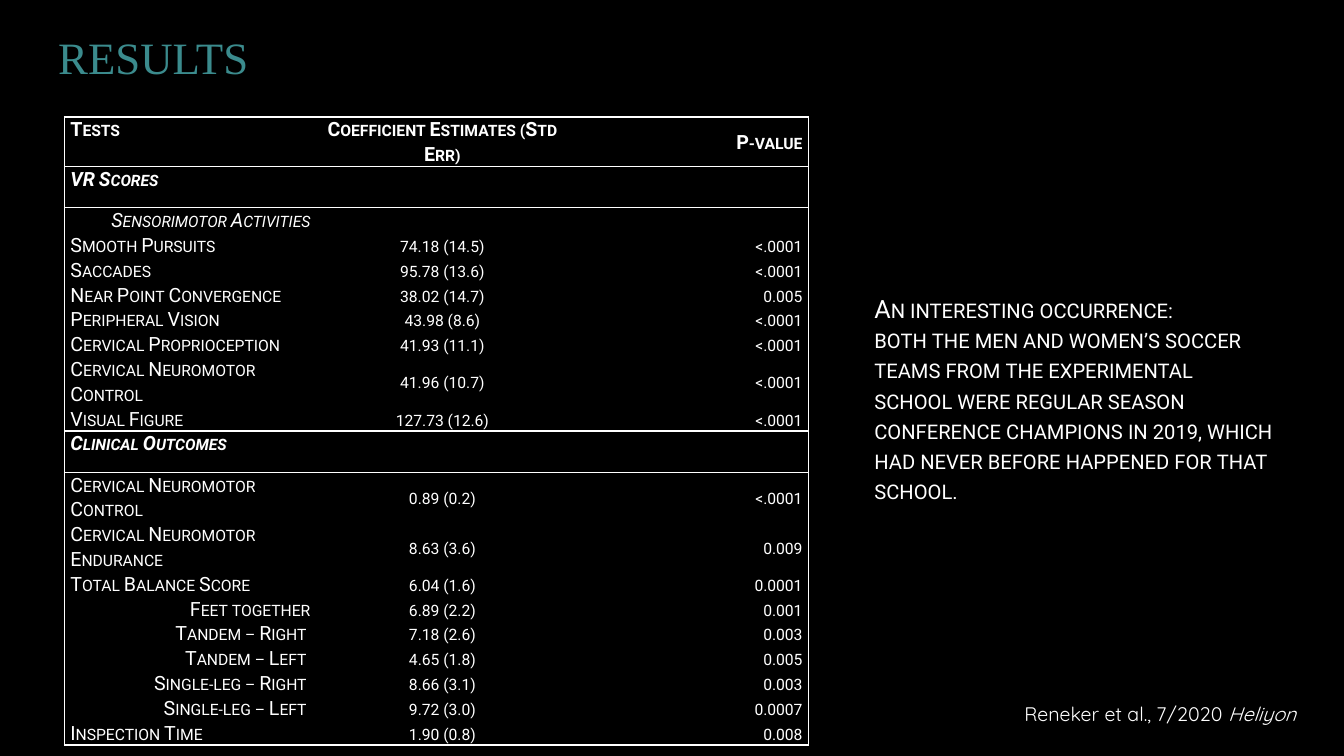
"""Build the results slide: a coefficient table, a remark and a citation."""
from dataclasses import dataclass

from pptx import Presentation, table as tbl, text as txt
from pptx.dml.color import RGBColor
from pptx.enum import text as et
from pptx.oxml import xmlchemy as xc
from pptx.text import text as tt
from pptx.util import Pt

BLACK = RGBColor(0x00, 0x00, 0x00)
WHITE = RGBColor(0xFF, 0xFF, 0xFF)
TEAL = RGBColor(0x3B, 0x8B, 0x8D)

LEFT, CENTER, RIGHT = et.PP_ALIGN.LEFT, et.PP_ALIGN.CENTER, et.PP_ALIGN.RIGHT
COLUMN_WIDTHS = (180, 180, 171.5)
LINE_HEIGHT = 17.7
SECTION_HEIGHT = 29.5


@dataclass(frozen=True)
class ResultRow:
    test: str
    estimate: str = ""
    p_value: str = ""
    align: et.PP_ALIGN = LEFT
    bold: bool = False
    italic: bool = False
    ruled: bool = False
    height: float = LINE_HEIGHT


@dataclass(frozen=True)
class Style:
    font: str
    size: float
    color: RGBColor = WHITE
    small_caps: bool = False


TITLE = Style("Times New Roman", 32, TEAL)
TABLE = Style("Roboto", 14, small_caps=True)
REMARK = Style("Roboto", 18, small_caps=True)
CITATION = Style("Quicksand", 14)


def section(name: str) -> ResultRow:
    """Describe a ruled section heading."""
    return ResultRow(name, bold=True, italic=True, ruled=True, height=SECTION_HEIGHT)


RESULTS = (
    ResultRow("Tests", "Coefficient Estimates (Std Err)", "P-value",
              bold=True, ruled=True, height=2 * LINE_HEIGHT),
    section("VR Scores"),
    ResultRow("Sensorimotor Activities", align=RIGHT, italic=True),
    ResultRow("Smooth Pursuits", "74.18 (14.5)", "<.0001"),
    ResultRow("Saccades", "95.78 (13.6)", "<.0001"),
    ResultRow("Near Point Convergence", "38.02 (14.7)", "0.005"),
    ResultRow("Peripheral Vision", "43.98 (8.6)", "<.0001"),
    ResultRow("Cervical Proprioception", "41.93 (11.1)", "<.0001"),
    ResultRow("Cervical Neuromotor Control", "41.96 (10.7)", "<.0001", height=2 * LINE_HEIGHT),
    ResultRow("Visual Figure", "127.73 (12.6)", "<.0001"),
    section("Clinical Outcomes"),
    ResultRow("Cervical Neuromotor Control", "0.89 (0.2)", "<.0001", height=2 * LINE_HEIGHT),
    ResultRow("Cervical Neuromotor Endurance", "8.63 (3.6)", "0.009", height=2 * LINE_HEIGHT),
    ResultRow("Total Balance Score", "6.04 (1.6)", "0.0001"),
    ResultRow("Feet together", "6.89 (2.2)", "0.001", RIGHT),
    ResultRow("Tandem – Right ", "7.18 (2.6)", "0.003", RIGHT),
    ResultRow("Tandem – Left ", "4.65 (1.8)", "0.005", RIGHT),
    ResultRow("Single-leg – Right ", "8.66 (3.1)", "0.003", RIGHT),
    ResultRow("Single-leg – Left ", "9.72 (3.0)", "0.0007", RIGHT),
    ResultRow("Inspection Time", "1.90 (0.8)", "0.008"),
)


def format_run(run: tt._Run, style: Style, bold: bool = False, italic: bool = False) -> None:
    """Apply a text style to a run."""
    font = run.font
    font.name, font.size = style.font, Pt(style.size)
    font.bold, font.italic = bold, italic
    font.color.rgb = style.color
    if style.small_caps:
        run._r.get_or_add_rPr().set("cap", "small")


def set_borders(cell: tbl._Cell, sides: str) -> None:
    """Draw white borders on the given sides and clear the others."""
    properties = cell._tc.get_or_add_tcPr()
    for side in "LRTB":
        line = xc.OxmlElement(f"a:ln{side}")
        properties.append(line)
        if side in sides:
            line.set("w", str(Pt(1)))
            fill = xc.OxmlElement("a:solidFill")
            color = xc.OxmlElement("a:srgbClr")
            color.set("val", str(WHITE))
            fill.append(color)
            line.append(fill)
        else:
            line.append(xc.OxmlElement("a:noFill"))
    cell.fill.background()


def add_plain_table(slide, rows: int, columns: int, left: float, top: float,
                    width: float, height: float) -> tbl.Table:
    """Add a table without header or banding emphasis."""
    frame = slide.shapes.add_table(rows, columns, Pt(left), Pt(top), Pt(width), Pt(height))
    frame.table.first_row = frame.table.horz_banding = False
    return frame.table


def fill_result_cell(cell: tbl._Cell, words: str, align: et.PP_ALIGN, row: ResultRow) -> None:
    """Write one cell of the results table."""
    cell.margin_left = cell.margin_right = Pt(4.3)
    cell.margin_top = cell.margin_bottom = 0
    paragraph = cell.text_frame.paragraphs[0]
    paragraph.alignment, paragraph.line_spacing = align, 1.07
    if words:
        paragraph.text = words
        format_run(paragraph.runs[0], TABLE, row.bold, row.italic)
    else:
        ending = xc.OxmlElement("a:endParaRPr")
        ending.set("sz", str(TABLE.size * 100))
        paragraph._p.append(ending)


def add_results(slide) -> None:
    """Add the table of coefficient estimates."""
    results = add_plain_table(slide, len(RESULTS), len(COLUMN_WIDTHS), 46, 83.5,
                              sum(COLUMN_WIDTHS), sum(row.height for row in RESULTS))
    for column, width in zip(results.columns, COLUMN_WIDTHS):
        column.width = Pt(width)
    for index, row in enumerate(RESULTS):
        results.rows[index].height = Pt(row.height)
        below = RESULTS[index + 1].ruled if index + 1 < len(RESULTS) else True
        above = index > 0 and RESULTS[index - 1].ruled
        rules = ("T" if row.ruled or above else "") + ("B" if row.ruled or below else "")
        columns = zip((row.test, row.estimate, row.p_value),
                      (row.align, CENTER, RIGHT), ("L", "", "R"))
        for position, (words, align, edge) in enumerate(columns):
            cell = results.cell(index, position)
            fill_result_cell(cell, words, align, row)
            cell.vertical_anchor = et.MSO_ANCHOR.MIDDLE if position else et.MSO_ANCHOR.TOP
            set_borders(cell, rules + edge)


def add_text(slide, words: str, style: Style, left: float, top: float,
             width: float, height: float) -> None:
    """Add a wrapped text box in one style."""
    frame = slide.shapes.add_textbox(Pt(left), Pt(top), Pt(width), Pt(height)).text_frame
    frame.word_wrap = True
    frame.text = words
    for paragraph in frame.paragraphs:
        format_run(paragraph.runs[0], style)


def add_citation(slide) -> None:
    """Add the one-cell table holding the citation."""
    cell = add_plain_table(slide, 1, 1, 718.5, 497.5, 214.5, 30).cell(0, 0)
    paragraph = cell.text_frame.paragraphs[0]
    paragraph.text = "Reneker et al., 7/2020 "
    paragraph.alignment = RIGHT
    paragraph.add_run().text = "Heliyon"
    for run, italic in zip(paragraph.runs, (False, True)):
        format_run(run, CITATION, italic=italic)
    set_borders(cell, "")


def main() -> None:
    """Build and save the slide."""
    deck = Presentation()
    deck.slide_width, deck.slide_height = Pt(960), Pt(540)
    slide = deck.slides.add_slide(deck.slide_layouts[6])
    slide.background.fill.solid()
    slide.background.fill.fore_color.rgb = BLACK
    add_results(slide)
    add_text(slide, "RESULTS", TITLE, 34.5, 18, 155, 46)
    add_citation(slide)
    add_text(slide, "An interesting occurrence:\nboth the men and women’s soccer teams from the "
             "experimental school were regular season conference champions in 2019, which had "
             "never before happened for that school.", REMARK, 617.5, 206, 299.5, 160)
    deck.save("out.pptx")


if __name__ == "__main__":
    main()
